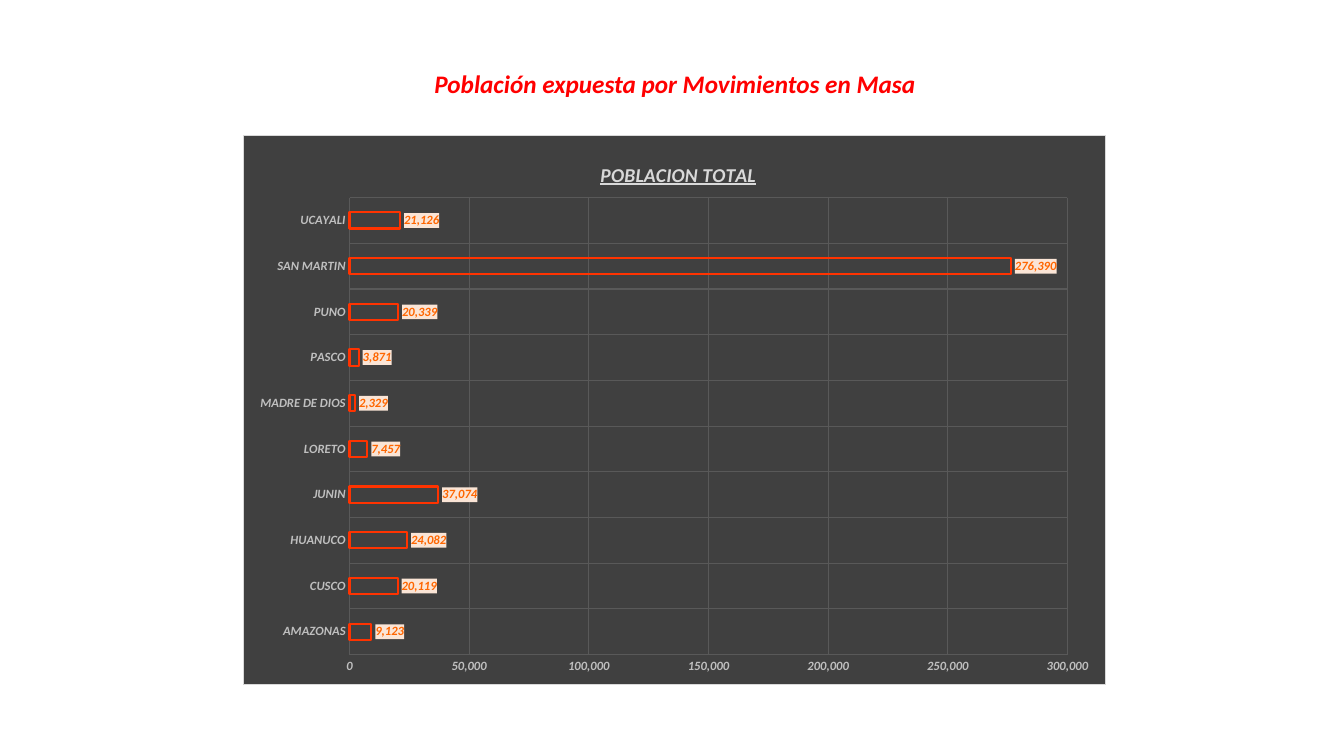
from pptx import Presentation
from pptx.chart.data import CategoryChartData
from pptx.dml.color import RGBColor
from pptx.enum.chart import XL_CHART_TYPE, XL_LABEL_POSITION, XL_TICK_MARK
from pptx.enum.text import MSO_ANCHOR, MSO_AUTO_SIZE, PP_ALIGN
from pptx.oxml import parse_xml
from pptx.oxml.ns import nsdecls, qn
from pptx.util import Inches, Pt

RED = RGBColor(0xFF, 0x00, 0x00)
FLAME = RGBColor(0xFF, 0x33, 0x00)
ORANGE = RGBColor(0xFF, 0x66, 0x00)
PEACH = RGBColor(0xFB, 0xE5, 0xD6)
DARK = RGBColor(0x40, 0x40, 0x40)
GRID = RGBColor(0x59, 0x59, 0x59)
SILVER = RGBColor(0xBF, 0xBF, 0xBF)
PALE = RGBColor(0xD9, 0xD9, 0xD9)

PEOPLE = {
    "AMAZONAS": 9123,
    "CUSCO": 20119,
    "HUANUCO": 24082,
    "JUNIN": 37074,
    "LORETO": 7457,
    "MADRE DE DIOS": 2329,
    "PASCO": 3871,
    "PUNO": 20339,
    "SAN MARTIN": 276390,
    "UCAYALI": 21126,
}


class Deck:
    """Holds the text style and the current slide, and draws its parts."""

    def __init__(self, slide, face="Calibri", number="#,##0"):
        self.slide = slide
        self.face = face
        self.number = number

    def style(self, font, size, color):
        font.name = self.face
        font.size = Pt(size)
        font.bold = font.italic = True
        font.color.rgb = color

    def fill(self, color, border=None):
        line = f'<a:solidFill><a:srgbClr val="{border}"/></a:solidFill>' if border else "<a:noFill/>"
        return parse_xml(
            f'<c:spPr {nsdecls("c", "a")}><a:solidFill><a:srgbClr val="{color}"/></a:solidFill>'
            f'<a:ln w="{Pt(0.75)}">{line}</a:ln></c:spPr>')

    def place(self, node, **box):
        old = node.find(qn("c:layout"))
        if old is not None:
            node.remove(old)
        inner = '<c:layoutTarget val="inner"/>' if "w" in box else ""
        sides = "".join(f'<c:{key}Mode val="edge"/>' for key in "xy")
        sizes = "".join(f'<c:{key} val="{part}"/>' for key, part in box.items())
        layout = parse_xml(
            f'<c:layout {nsdecls("c")}><c:manualLayout>{inner}{sides}{sizes}'
            '</c:manualLayout></c:layout>')
        text = node.find(qn("c:tx"))
        if text is None:
            node.insert(0, layout)
        else:
            text.addnext(layout)

    def heading(self, text, left, top, width, height):
        box = self.slide.shapes.add_textbox(
            Inches(left), Inches(top), Inches(width), Inches(height))
        frame = box.text_frame
        frame.word_wrap = False
        frame.auto_size = MSO_AUTO_SIZE.SHAPE_TO_FIT_TEXT
        frame.vertical_anchor = MSO_ANCHOR.TOP
        line = frame.paragraphs[0]
        line.alignment = PP_ALIGN.CENTER
        run = line.add_run()
        run.text = text
        self.style(run.font, 18, RED)

    def axis(self, axis):
        axis.major_tick_mark = axis.minor_tick_mark = XL_TICK_MARK.NONE
        axis.format.line.fill.background()
        axis.has_major_gridlines = True
        line = axis.major_gridlines.format.line
        line.color.rgb = GRID
        line.width = Pt(0.75)
        self.style(axis.tick_labels.font, 9, SILVER)

    def labels(self, plot):
        plot.has_data_labels = True
        labels = plot.data_labels
        labels.show_value = True
        labels.position = XL_LABEL_POSITION.OUTSIDE_END
        labels.number_format = self.number
        labels.number_format_is_linked = False
        self.style(labels.font, 9, ORANGE)
        labels._element.find(qn("c:numFmt")).addnext(self.fill(PEACH))

    def title(self, chart, text):
        chart.has_title = True
        title = chart.chart_title
        title.include_in_layout = False
        run = title.text_frame.paragraphs[0].add_run()
        run.text = text
        self.style(run.font, 14, PALE)
        run.font.underline = True
        self.place(title._element, x=0.41, y=0.04)

    def bars(self, name, values, left, top, width, height):
        data = CategoryChartData(number_format=self.number)
        data.categories = list(values)
        data.add_series(name, list(values.values()))
        chart = self.slide.shapes.add_chart(
            XL_CHART_TYPE.BAR_CLUSTERED, Inches(left), Inches(top),
            Inches(width), Inches(height), data).chart
        chart.font.name = self.face
        chart.font.size = Pt(10)
        chart.has_legend = False
        self.title(chart, name)
        for axis in (chart.category_axis, chart.value_axis):
            self.axis(axis)
        scale = chart.value_axis
        scale.minimum_scale, scale.maximum_scale, scale.major_unit = 0, 300000, 50000
        scale.tick_labels.number_format = self.number
        scale.tick_labels.number_format_is_linked = False
        plot = chart.plots[0]
        plot.vary_by_categories = False
        plot.gap_width = 182
        plot.overlap = -50
        look = plot.series[0].format
        look.fill.background()
        look.line.color.rgb = FLAME
        look.line.width = Pt(1.5)
        self.labels(plot)
        body = chart._chartSpace.find(qn("c:chart"))
        body.addnext(self.fill(DARK, PALE))
        self.place(body.find(qn("c:plotArea")), x=0.123, y=0.113, w=0.833, h=0.832)


def main():
    show = Presentation()
    show.slide_width, show.slide_height = Inches(13.33), Inches(7.5)
    deck = Deck(show.slides.add_slide(show.slide_layouts[6]))
    deck.heading("Población expuesta por Movimientos en Masa", 4.18, 0.63, 5.03, 0.4)
    deck.bars("POBLACION TOTAL", PEOPLE, 2.41, 1.34, 8.56, 5.46)
    show.save("out.pptx")


if __name__ == "__main__":
    main()
